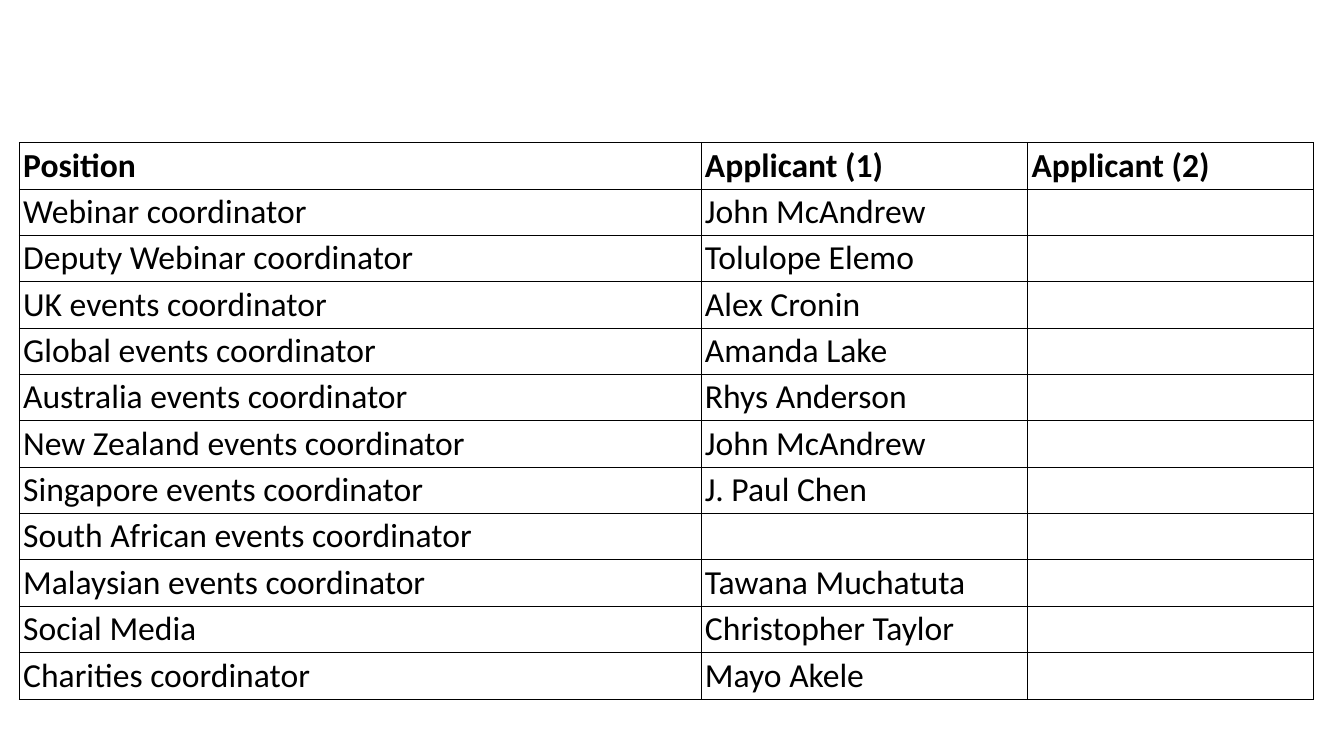
"""Build a slide with a table of coordinator positions and their applicants."""
from dataclasses import dataclass

from lxml import etree
from pptx import Presentation
from pptx.dml.color import RGBColor
from pptx.oxml.ns import qn
from pptx.util import Inches, Pt


@dataclass
class Theme:
    font: str = "Calibri"
    ink: str = "000000"
    size: int = 48
    border: int = 1


theme = Theme()

rows = [
    ("Position", "Applicant (1)", "Applicant (2)"),
    ("Webinar coordinator", "John McAndrew", ""),
    ("Deputy Webinar coordinator", "Tolulope Elemo", ""),
    ("UK events coordinator", "Alex Cronin", ""),
    ("Global events coordinator", "Amanda Lake", ""),
    ("Australia events coordinator", "Rhys Anderson", ""),
    ("New Zealand events coordinator", "John McAndrew", ""),
    ("Singapore events coordinator", "J. Paul Chen", ""),
    ("South African events coordinator", "", ""),
    ("Malaysian events coordinator", "Tawana Muchatuta", ""),
    ("Social Media", "Christopher Taylor", ""),
    ("Charities coordinator", "Mayo Akele", ""),
]
column_widths = [13.53, 6.48, 5.68]
row_height = 0.92


def add_borders(cell):
    properties = cell._tc.get_or_add_tcPr()
    for side in ("a:lnL", "a:lnR", "a:lnT", "a:lnB"):
        line = etree.SubElement(properties, qn(side), w=str(Pt(theme.border)))
        fill = etree.SubElement(line, qn("a:solidFill"))
        etree.SubElement(fill, qn("a:srgbClr"), val=theme.ink)


presentation = Presentation()
presentation.slide_width = Inches(26.67)
presentation.slide_height = Inches(15)
slide = presentation.slides.add_slide(presentation.slide_layouts[6])

table = slide.shapes.add_table(
    len(rows), len(column_widths), Inches(0.38), Inches(2.83),
    Inches(sum(column_widths)), Inches(row_height * len(rows)),
).table
table.horz_banding = False
for column, width in zip(table.columns, column_widths):
    column.width = Inches(width)

for row_index, row in enumerate(rows):
    table.rows[row_index].height = Inches(row_height)
    for column_index, words in enumerate(row):
        cell = table.cell(row_index, column_index)
        cell.margin_left = cell.margin_right = Inches(0.08)
        cell.margin_top = cell.margin_bottom = Inches(0.05)
        add_borders(cell)
        cell.fill.background()
        paragraph = cell.text_frame.paragraphs[0]
        paragraph.text = words
        for run in paragraph.runs:
            run.font.name = theme.font
            run.font.size = Pt(theme.size)
            run.font.bold = row_index == 0
            run.font.color.rgb = RGBColor.from_string(theme.ink)

presentation.save("out.pptx")
